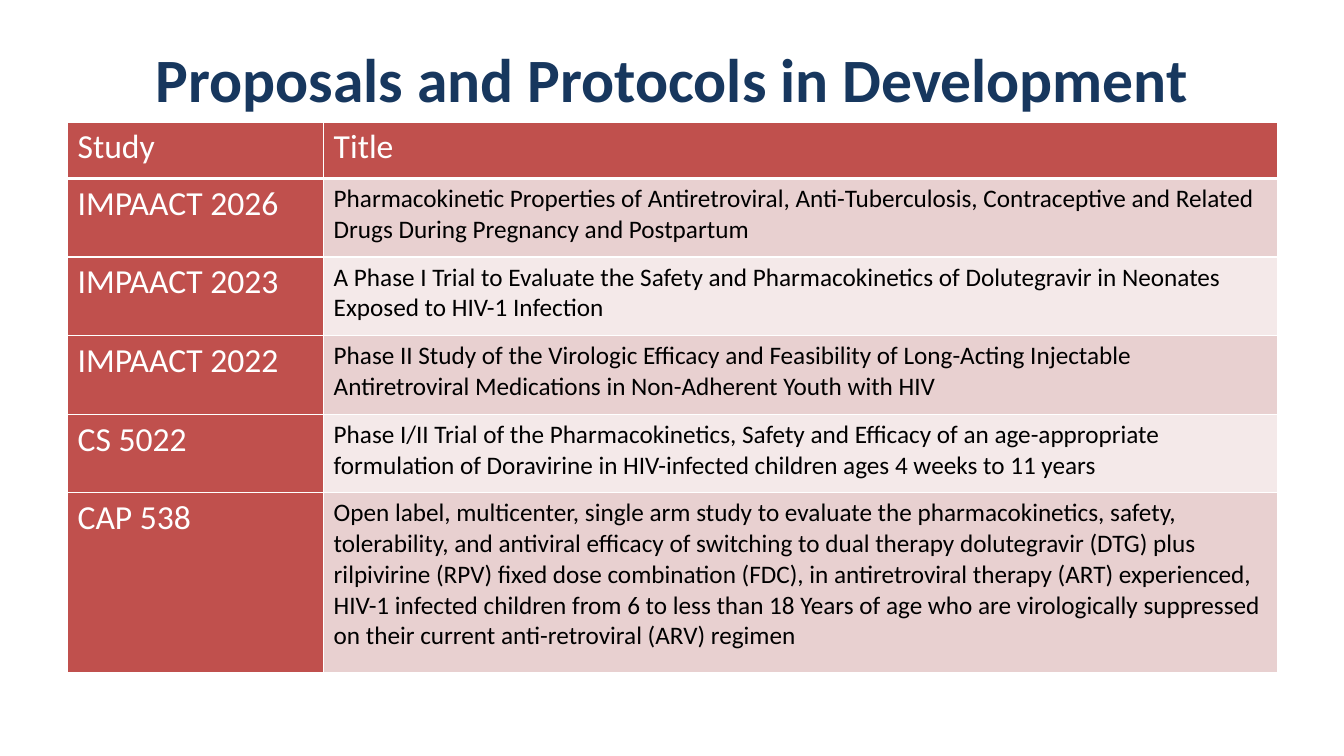
from typing import NamedTuple

from lxml import etree
from pptx import Presentation
from pptx.dml.color import RGBColor
from pptx.enum.text import MSO_ANCHOR, PP_ALIGN
from pptx.oxml.ns import qn
from pptx.util import Inches, Pt

CENTER = PP_ALIGN.CENTER
MIDDLE = MSO_ANCHOR.MIDDLE

FONT = "Calibri"
NAVY = "17375E"
RED = "C0504D"
BAND_FILLS = ("E8D0D0", "F4E9E9")
WHITE = "FFFFFF"
BLACK = "000000"

LEFT, WIDTH = 0.67, 12
TABLE_TOP = 1.21
COLUMN_WIDTHS = (2.54, 9.46)
HEADER_HEIGHT = 0.56


class Study(NamedTuple):
    name: str
    title: str
    height: float = 0.78


STUDIES = [
    Study("IMPAACT 2026",
          "Pharmacokinetic Properties of Antiretroviral, Anti-Tuberculosis, "
          "Contraceptive and Related Drugs During Pregnancy and Postpartum"),
    Study("IMPAACT 2023",
          "A Phase I Trial to Evaluate the Safety and Pharmacokinetics of "
          "Dolutegravir in Neonates Exposed to HIV-1 Infection"),
    Study("IMPAACT 2022",
          "Phase II Study of the Virologic Efficacy and Feasibility of Long-Acting "
          "Injectable Antiretroviral Medications in Non-Adherent Youth with HIV"),
    Study("CS 5022",
          "Phase I/II Trial of the Pharmacokinetics, Safety and Efficacy of an "
          "age-appropriate formulation of Doravirine in HIV-infected children "
          "ages 4 weeks to 11 years"),
    Study("CAP 538",
          "Open label, multicenter, single arm study to evaluate the "
          "pharmacokinetics, safety, tolerability, and antiviral efficacy of "
          "switching to dual therapy dolutegravir (DTG) plus rilpivirine (RPV) "
          "fixed dose combination (FDC), in antiretroviral therapy (ART) "
          "experienced, HIV-1 infected children from 6 to less than 18 Years of "
          "age who are virologically suppressed on their current anti-retroviral "
          "(ARV) regimen", 1.78),
]


def color(value: str) -> RGBColor:
    return RGBColor.from_string(value)


def add_span(para, text: str, size: float, ink: str, bold: bool = False) -> None:
    span = para.add_run()
    span.text = text
    span.font.name = FONT
    span.font.size = Pt(size)
    span.font.bold = bold
    span.font.color.rgb = color(ink)


def set_borders(cell, bottom: float) -> None:
    """Draw white cell borders, 1 pt wide except for the given bottom width."""
    properties = cell._tc.get_or_add_tcPr()
    for side, width in (("L", 1), ("R", 1), ("T", 1), ("B", bottom)):
        line = etree.SubElement(properties, qn(f"a:ln{side}"), w=str(Pt(width)))
        fill = etree.SubElement(line, qn("a:solidFill"))
        etree.SubElement(fill, qn("a:srgbClr"), val=WHITE)


def fill_cell(cell, text: str, size: float, ink: str, fill: str,
              bottom: float = 1) -> None:
    set_borders(cell, bottom)
    cell.fill.solid()
    cell.fill.fore_color.rgb = color(fill)
    add_span(cell.text_frame.paragraphs[0], text, size, ink)


def add_title(page, text: str) -> None:
    box = page.shapes.title
    box.left, box.top = Inches(LEFT), Inches(0)
    box.width, box.height = Inches(WIDTH), Inches(1.55)
    box.text_frame.vertical_anchor = MIDDLE
    para = box.text_frame.paragraphs[0]
    para.alignment = CENTER
    add_span(para, text, 44, NAVY, bold=True)


def add_study_table(page) -> None:
    heights = [HEADER_HEIGHT] + [study.height for study in STUDIES]
    table = page.shapes.add_table(
        len(heights), len(COLUMN_WIDTHS), Inches(LEFT), Inches(TABLE_TOP),
        Inches(WIDTH), Inches(sum(heights))).table
    for column, width in zip(table.columns, COLUMN_WIDTHS):
        column.width = Inches(width)
    for row, height in zip(table.rows, heights):
        row.height = Inches(height)

    for index, heading in enumerate(("Study", "Title")):
        fill_cell(table.cell(0, index), heading, 24, WHITE, RED, bottom=3)
    for index, study in enumerate(STUDIES):
        band = BAND_FILLS[index % len(BAND_FILLS)]
        fill_cell(table.cell(index + 1, 0), study.name, 24, WHITE, RED)
        fill_cell(table.cell(index + 1, 1), study.title, 18, BLACK, band)


def main() -> None:
    deck = Presentation()
    deck.slide_width, deck.slide_height = Inches(13.33), Inches(7.5)
    title_only = deck.slide_layouts[5]
    page = deck.slides.add_slide(title_only)
    add_title(page, "Proposals and Protocols in Development")
    add_study_table(page)
    deck.save("out.pptx")


if __name__ == "__main__":
    main()
